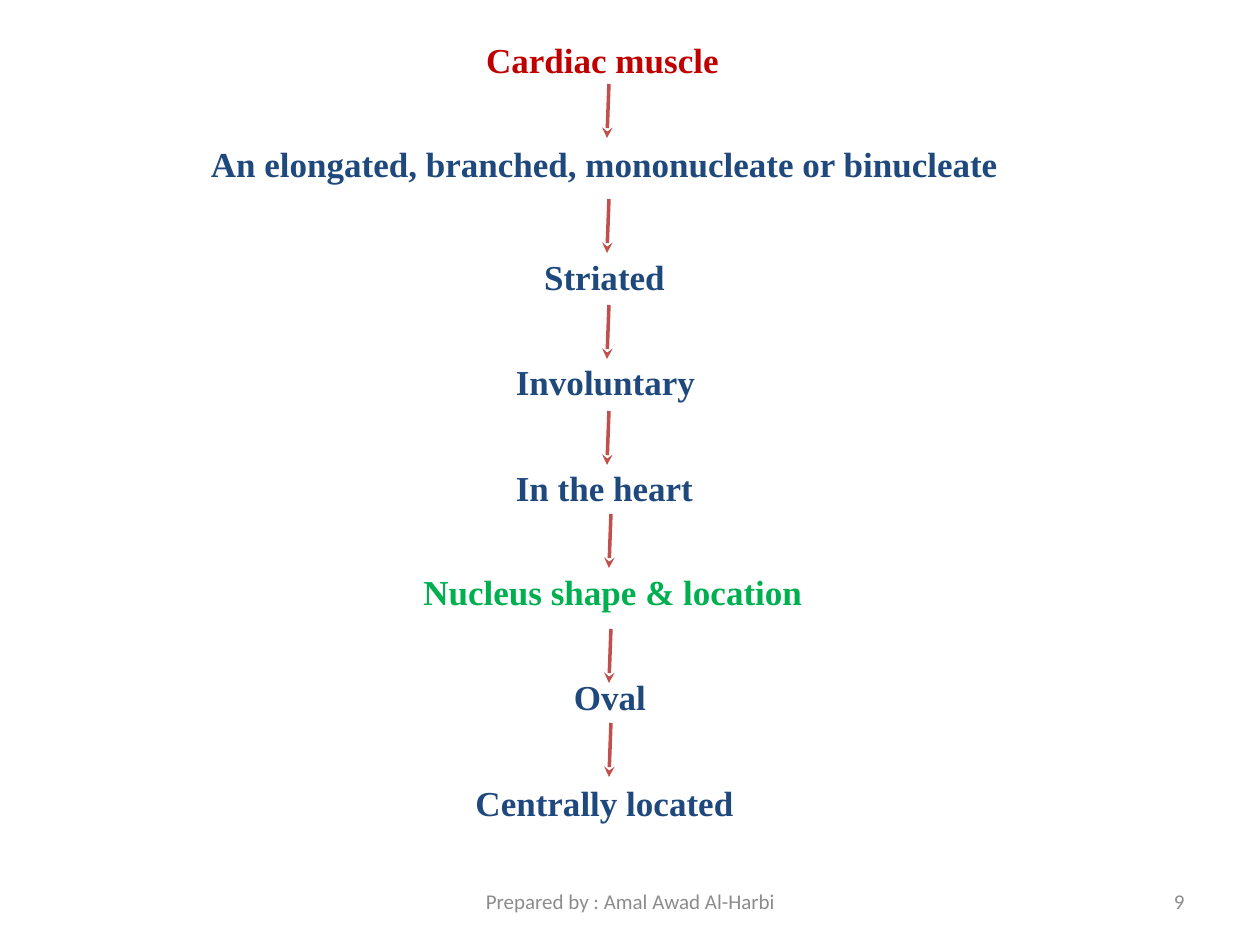
from pptx import Presentation
from pptx.dml.color import RGBColor
from pptx.enum.shapes import MSO_CONNECTOR
from pptx.enum.text import MSO_ANCHOR as ANCHOR, MSO_AUTO_SIZE as FIT, PP_ALIGN as ALIGN
from pptx.oxml.ns import qn
from pptx.util import Pt
from lxml.etree import SubElement

PX = 914400 / 126
RED = RGBColor(0xC0, 0x00, 0x00)
NAVY = RGBColor(0x1F, 0x49, 0x7D)
GREEN = RGBColor(0x00, 0xB0, 0x50)
BRICK = RGBColor(0xC0, 0x50, 0x4D)
GRAY = RGBColor(0x8C, 0x8C, 0x8C)

STEP_H, ARROW_H, ARROW_LEAN = 55, 54, 2
STEPS = [
    ("An elongated, branched, mononucleate or binucleate", 179, 136, 851, NAVY),
    ("Striated", 525, 249, 159, NAVY),
    ("Involuntary", 494, 354, 223, NAVY),
    ("In the heart", 494, 460, 221, NAVY),
    ("Nucleus shape & location", 410, 564, 406, GREEN),
    ("Oval", 557, 669, 106, NAVY),
    ("Centrally located", 451, 775, 307, NAVY),
]
ARROWS = [(609, 84), (609, 199), (609, 305), (609, 411), (611, 514), (611, 629), (611, 723)]


def emu(*lengths):
    """Turn px lengths into EMU."""
    return [round(n * PX) for n in lengths]


class FlowSlide:
    """Hold the slide and the styles of its flow chart."""

    step = dict(name="Times New Roman", size=Pt(20), bold=True)
    footer = dict(name="Calibri", size=Pt(12), bold=False)

    def __init__(self, prs):
        """Add a title-only slide."""
        self.s = prs.slides.add_slide(prs.slide_layouts[5])

    def set_text(self, sp, text, color, style, align, anchor, fit, wrap=True):
        """Put one formatted line of text into a shape."""
        tf = sp.text_frame
        frame = dict(word_wrap=wrap, auto_size=fit, vertical_anchor=anchor)
        for key, value in frame.items():
            setattr(tf, key, value)
        p = tf.paragraphs[0]
        p.alignment = align
        r = p.add_run()
        r.text = text
        for key, value in style.items():
            setattr(r.font, key, value)
        r.font.color.rgb = color

    def add_title(self, text, x, y, w, color):
        """Place and format the title."""
        sp = self.s.shapes.title
        sp.left, sp.top, sp.width, sp.height = emu(x, y, w, STEP_H)
        self.set_text(sp, text, color, self.step, ALIGN.CENTER, ANCHOR.TOP,
                      FIT.SHAPE_TO_FIT_TEXT)

    def add_step(self, text, x, y, w, color):
        """Add one step of the flow."""
        sp = self.s.shapes.add_textbox(*emu(x, y, w, STEP_H))
        self.set_text(sp, text, color, self.step, ALIGN.CENTER, ANCHOR.TOP,
                      FIT.SHAPE_TO_FIT_TEXT, wrap=color != GREEN)

    def add_footer(self, text, x, w, align):
        """Add one text of the bottom line."""
        sp = self.s.shapes.add_textbox(*emu(x, 876, w, 50))
        self.set_text(sp, text, GRAY, self.footer, align, ANCHOR.MIDDLE, FIT.NONE)

    def add_arrow(self, x, y):
        """Add one arrow to the next step."""
        ends = emu(x, y, x - ARROW_LEAN, y + ARROW_H)
        c = self.s.shapes.add_connector(MSO_CONNECTOR.STRAIGHT, *ends)
        c.line.color.rgb = BRICK
        c.line.width = Pt(2)
        sp_pr = c._element.spPr
        SubElement(sp_pr.find(qn("a:ln")), qn("a:tailEnd"), type="stealth")
        SubElement(sp_pr, qn("a:effectLst"))


def main():
    """Build and save the slide."""
    prs = Presentation()
    prs.slide_width, prs.slide_height = emu(1260, 945)
    slide = FlowSlide(prs)
    slide.add_title("Cardiac muscle", 462, 32, 281, RED)
    for step in STEPS:
        slide.add_step(*step)
    slide.add_footer("9", 903, 294, ALIGN.RIGHT)
    slide.add_footer("Prepared by : Amal Awad Al-Harbi", 431, 399, ALIGN.CENTER)
    for arrow in ARROWS:
        slide.add_arrow(*arrow)
    prs.save("out.pptx")


if __name__ == "__main__":
    main()
